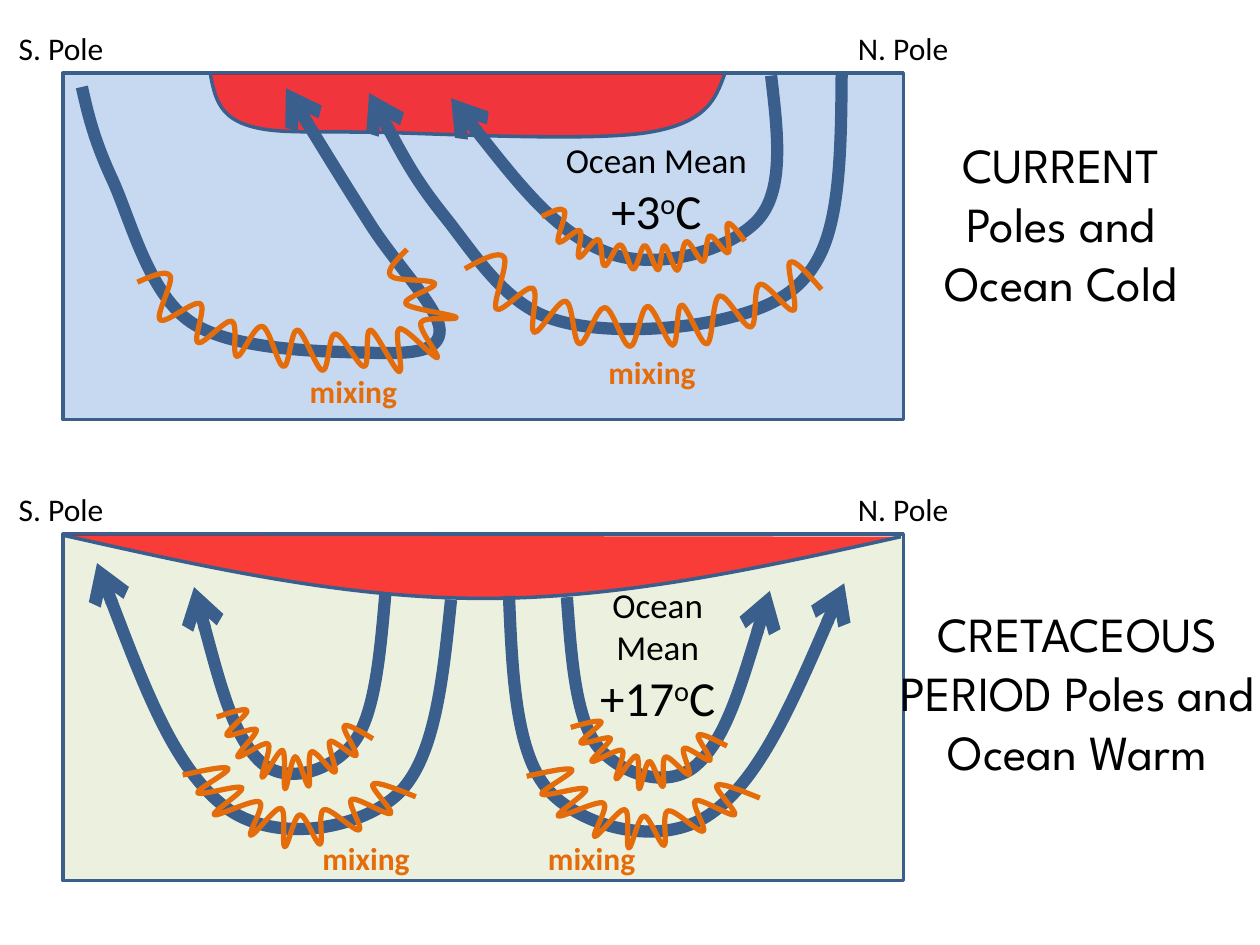
import math
from dataclasses import dataclass

from lxml import etree
from pptx import Presentation
from pptx.dml.color import RGBColor
from pptx.enum.shapes import MSO_SHAPE
from pptx.enum.text import MSO_AUTO_SIZE, PP_ALIGN
from pptx.oxml.ns import qn
from pptx.util import Inches, Pt

RECTANGLE = MSO_SHAPE.RECTANGLE
GROW = MSO_AUTO_SIZE.SHAPE_TO_FIT_TEXT
LEFT, CENTER = PP_ALIGN.LEFT, PP_ALIGN.CENTER


@dataclass(frozen=True)
class Theme:
    ink: str = "000000"
    outline: str = "3A5F8C"
    mixing: str = "E46C0A"
    warm: str = "FF0000"
    cold_ocean: str = "C6D9F1"
    mild_ocean: str = "EBF1DE"
    body: str = "Calibri"
    heading: str = "League Spartan"
    label_size: int = 18
    mean_size: int = 20
    large_size: int = 28
    thin: int = 2
    wave: int = 3
    current: int = 7


THEME = Theme()
LABEL = {"name": THEME.body, "size": Pt(THEME.label_size)}
MIXING = {**LABEL, "bold": True}
MEAN = {"name": THEME.body, "size": Pt(THEME.mean_size)}
VALUE = {"name": THEME.body, "size": Pt(THEME.large_size)}
HEADING = {"name": THEME.heading, "size": Pt(THEME.large_size)}

SOUTH_WAVE = [
    (1.09, 2.24), (1.35, 2.19), (1.27, 2.54), (1.59, 2.41), (1.57, 2.72),
    (1.84, 2.55), (1.88, 2.83), (2.08, 2.59), (2.25, 2.91), (2.36, 2.62),
    (2.56, 2.94), (2.66, 2.65), (2.89, 2.91), (2.94, 2.62), (3.17, 2.95),
    (3.17, 2.61), (3.47, 2.84), (3.34, 2.56), (3.62, 2.52), (3.22, 2.41),
    (3.45, 2.25), (3.1, 2.19), (3.23, 1.98)]
NORTH_WAVE = [
    (0, 0.11), (0.31, 0.02), (0.25, 0.42), (0.54, 0.26), (0.55, 0.6),
    (0.8, 0.36), (0.91, 0.69), (1.11, 0.41), (1.31, 0.71), (1.45, 0.4),
    (1.65, 0.7), (1.72, 0.39), (1.92, 0.69), (2.02, 0.32), (2.27, 0.56),
    (2.34, 0.23), (2.61, 0.43), (2.58, 0.06), (2.83, 0.27)]
BOWL_WAVE = [
    (0, 0.06), (0.36, 0.01), (0.12, 0.2), (0.47, 0.16), (0.25, 0.37),
    (0.61, 0.27), (0.54, 0.53), (0.78, 0.32), (0.81, 0.62), (0.93, 0.37),
    (1.09, 0.6), (1.12, 0.33), (1.4, 0.49), (1.34, 0.25), (1.65, 0.36),
    (1.51, 0.13), (1.85, 0.23)]

CURRENT_PERIOD = {
    "ocean": THEME.cold_ocean,
    "warm_layer": [(1.67, 0.59), (1.95, 0.99), (2.98, 1.05), (5.15, 1.05), (5.75, 0.59)],
    "currents": [
        ([(0.65, 0.69), (0.89, 1.42), (1.52, 2.56), (2.95, 2.8), (3.49, 2.62),
          (2.94, 1.78), (2.27, 0.7)], 0),
        ([(6.68, 0.57), (6.51, 2.02), (5.71, 2.54), (4.35, 2.52), (3.53, 1.72),
          (2.93, 0.74)], 0),
        ([(6.12, 0.6), (6.01, 1.75), (4.81, 2), (3.58, 0.78)], 0)],
    "guides": [[(1.32, 2.36), (1.67, 2.66), (2.55, 2.8), (3.23, 2.8), (3.49, 2.67),
                (3.38, 2.35), (3.26, 2.23)]],
    "waves": [(SOUTH_WAVE, (1.09, 1.98, 2.53, 0.97), 0),
              (NORTH_WAVE, (3.69, 2.04, 2.83, 0.71), 0),
              (NORTH_WAVE, (4.29, 1.71, 1.62, 0.43), 3.4)],
    "mixing": [(2.31, 2.9), (4.68, 2.75)],
    "mean": ("+3", (4.36, 1.05, 1.7, 0.91)),
    "heading": ("CURRENT Poles and Ocean Cold", (7.17, 1.02, 2.5, 1.51)),
}
CRETACEOUS_PERIOD = {
    "ocean": THEME.mild_ocean,
    "warm_layer": [(0.51, 0.59), (3.83, 1.09), (7.15, 0.6)],
    "currents": [
        ([(3.58, 1.1), (3.15, 2.65), (1.78, 2.74), (0.77, 0.81)], 11),
        ([(3.06, 1.04), (2.81, 2.23), (2.06, 2.38), (1.54, 1)], 8.8),
        ([(4.04, 1.07), (4.36, 2.62), (5.64, 2.8), (6.7, 0.97)], -7.5),
        ([(4.5, 1.08), (4.74, 2.26), (5.53, 2.41), (6.11, 1.03)], -8.4)],
    "guides": [],
    "waves": [(BOWL_WAVE, (1.72, 1.98, 1.24, 0.62), 0),
              (BOWL_WAVE, (1.45, 2.44, 1.85, 0.62), 0),
              (BOWL_WAVE, (4.53, 2.07, 1.24, 0.53), 0),
              (BOWL_WAVE, (4.18, 2.45, 1.85, 0.62), 0)],
    "mixing": [(2.41, 2.95), (4.2, 2.95)],
    "mean": ("+17", (4.44, 0.92, 1.56, 1.25)),
    "heading": ("CRETACEOUS PERIOD Poles and Ocean Warm", (7.03, 1.08, 3.04, 1.99)),
}


def rotate(point, degrees):
    x, y = point
    cosine, sine = math.cos(math.radians(degrees)), math.sin(math.radians(degrees))
    return x * cosine - y * sine, x * sine + y * cosine


def spline(anchors):
    def blend(first, second, weight):
        return tuple(a + (b - a) * weight for a, b in zip(first, second))

    handles = []
    for before, anchor, after in zip(anchors, anchors[1:], anchors[2:]):
        pull = [(b - a) / 6 for a, b in zip(before, after)]
        handles += [tuple(a - p for a, p in zip(anchor, pull)), anchor,
                    tuple(a + p for a, p in zip(anchor, pull))]
    return [blend(anchors[0], handles[0], 0.5), *handles,
            blend(handles[-1], anchors[-1], 0.5), anchors[-1]]


def add_curve(slide, anchors, color, width, rotation=0):
    level = [rotate(anchor, -rotation) for anchor in anchors]
    points = [(Inches(x), Inches(y)) for x, y in spline(level)]
    builder = slide.shapes.build_freeform(*(Inches(value) for value in level[0]))
    builder.add_line_segments(points, close=False)
    shape = builder.convert_to_shape()
    segments = list(shape._element.iter(qn("a:lnTo")))
    for start in range(0, len(segments), 3):
        bezier = etree.Element(qn("a:cubicBezTo"))
        segments[start].addprevious(bezier)
        for segment in segments[start:start + 3]:
            bezier.append(segment[0])
            segment.getparent().remove(segment)
    middle = shape.left + shape.width / 2, shape.top + shape.height / 2
    x, y = rotate(middle, rotation)
    shape.left, shape.top = int(x - shape.width / 2), int(y - shape.height / 2)
    shape.rotation = rotation
    shape.shadow.inherit = False
    shape.fill.background()
    shape.line.color.rgb = RGBColor.from_string(color)
    shape.line.width = Pt(width)
    return shape


def add_text(slide, box, runs, alignment=CENTER, color=THEME.ink):
    shape = slide.shapes.add_textbox(*(Inches(value) for value in box))
    frame = shape.text_frame
    frame.word_wrap, frame.auto_size = True, GROW
    paragraph = frame.paragraphs[0]
    paragraph.alignment = alignment
    for text, text_format, baseline in runs:
        run = paragraph.add_run()
        run.text = text
        for name, value in text_format.items():
            setattr(run.font, name, value)
        run.font.color.rgb = RGBColor.from_string(color)
        if baseline:
            run._r.get_or_add_rPr().set("baseline", str(baseline * 1000))


def add_period(slide, period, left, top):
    def place(box):
        return left + box[0], top + box[1], *box[2:]

    ocean = slide.shapes.add_shape(
        RECTANGLE, *(Inches(value) for value in place((0.5, 0.58, 6.67, 2.75))))
    ocean.shadow.inherit = False
    ocean.fill.solid()
    ocean.fill.fore_color.rgb = RGBColor.from_string(period["ocean"])
    ocean.line.color.rgb = RGBColor.from_string(THEME.outline)
    ocean.line.width = Pt(THEME.thin)

    for text, x, width in (("S. Pole", 0.05, 0.92), ("N. Pole", 6.71, 0.96)):
        add_text(slide, place((x, 0.18, width, 0.4)), [(text, LABEL, 0)], LEFT)

    warm_layer = add_curve(
        slide, [place(p) for p in period["warm_layer"]], THEME.outline, THEME.thin)
    warm_layer.fill.solid()
    warm_layer.fill.fore_color.rgb = RGBColor.from_string(THEME.warm)
    color = warm_layer._element.spPr.find(qn("a:solidFill"))[0]
    etree.SubElement(color, qn("a:alpha"), val="75000")

    for anchors, rotation in period["currents"]:
        current = add_curve(
            slide, [place(p) for p in anchors], THEME.outline, THEME.current, rotation)
        etree.SubElement(current.line._get_or_add_ln(), qn("a:tailEnd"), type="arrow")
    for anchors in period["guides"]:
        add_curve(slide, [place(p) for p in anchors], THEME.outline, THEME.thin)
    for pattern, box, rotation in period["waves"]:
        add_wave(slide, pattern, place(box), rotation)

    for corner in period["mixing"]:
        add_text(slide, place((*corner, 0.99, 0.4)), [("mixing", MIXING, 0)],
                 color=THEME.mixing)
    degrees, box = period["mean"]
    add_text(slide, place(box), [("Ocean Mean ", MEAN, 0), (degrees, VALUE, 0),
                                 ("o", VALUE, 30), ("C", VALUE, 0)])
    heading, box = period["heading"]
    add_text(slide, place(box), [(heading, HEADING, 0)])


def add_wave(slide, pattern, box, rotation):
    left, top, width, height = box
    (x_low, x_high), (y_low, y_high) = ((min(v), max(v)) for v in zip(*pattern))
    anchors = [(left + (x - x_low) / (x_high - x_low) * width,
                top + (y - y_low) / (y_high - y_low) * height) for x, y in pattern]
    add_curve(slide, anchors, THEME.mixing, THEME.wave).rotation = rotation


def main():
    presentation = Presentation()
    presentation.slide_width, presentation.slide_height = Inches(10), Inches(7.5)
    slide = presentation.slides.add_slide(presentation.slide_layouts[6])
    for row, period in enumerate((CURRENT_PERIOD, CRETACEOUS_PERIOD)):
        add_period(slide, period, 0, row * 3.66)
    presentation.save("out.pptx")


if __name__ == "__main__":
    main()
